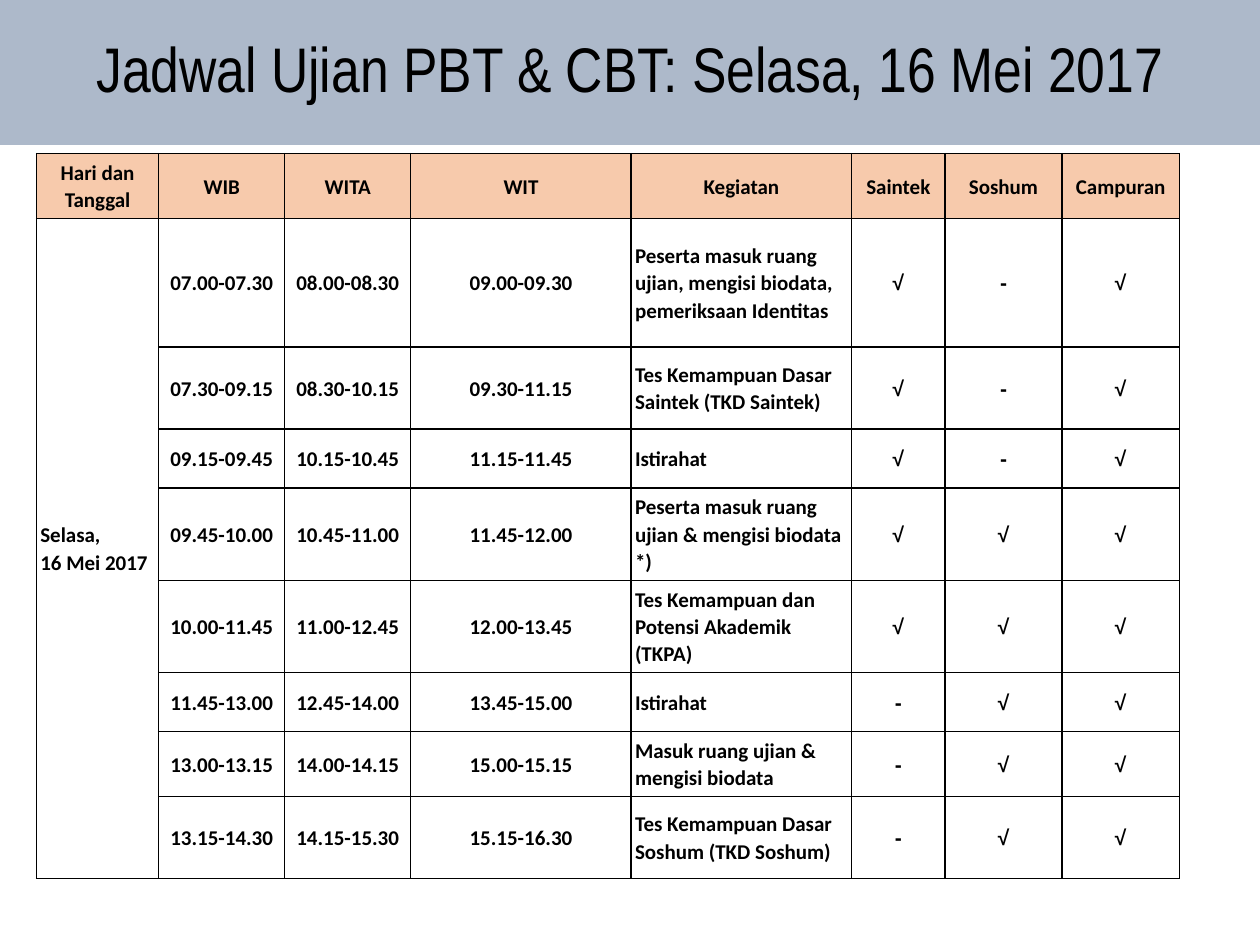
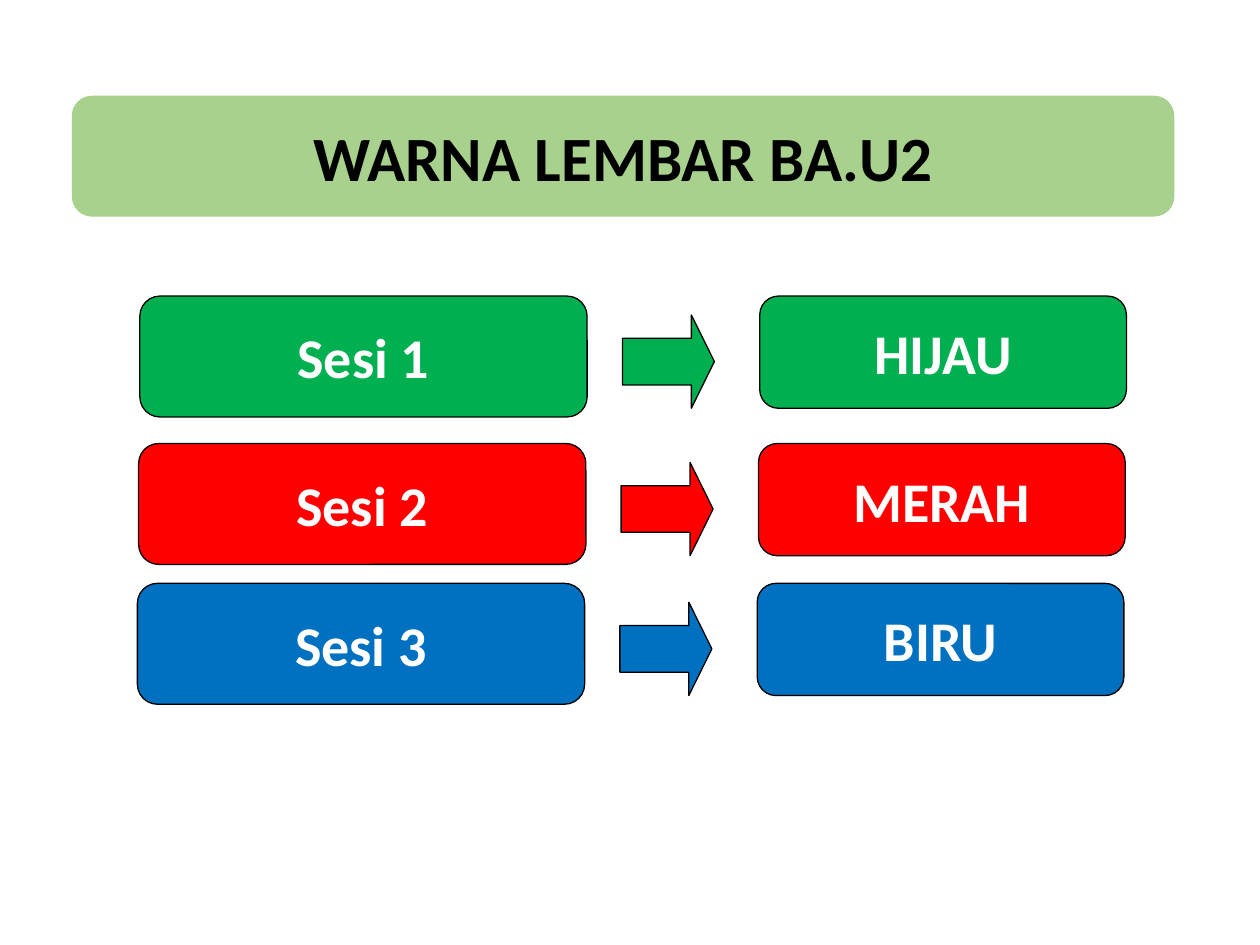
from dataclasses import dataclass

from lxml.etree import SubElement
from pptx import Presentation
from pptx.dml.color import RGBColor
from pptx.enum.shapes import MSO_SHAPE
from pptx.enum.text import MSO_ANCHOR, PP_ALIGN
from pptx.oxml.ns import qn
from pptx.util import Pt

SCALE = 9144


def px(n):
    return n * SCALE


@dataclass(frozen=True)
class Theme:
    band: str = "ADB9CA"
    head: str = "F7CAAC"
    banner: str = "A9D18E"
    green: str = "00B050"
    red: str = "FF0000"
    blue: str = "0070C0"
    ink: str = "000000"
    paper: str = "FFFFFF"
    body: str = "Calibri"
    narrow: str = "Arial Narrow"
    mark: str = "Arial"
    title: int = 36
    label: int = 32
    small: int = 12


class Deck:
    def __init__(self, theme):
        self.theme = theme
        self.prs = Presentation()
        self.prs.slide_width, self.prs.slide_height = px(1000), px(750)
        self.slide = None

    def page(self):
        self.slide = self.prs.slides.add_slide(self.prs.slide_layouts[6])

    def words(self, frame, text, size, color, font, bold=True, align=PP_ALIGN.CENTER, space=1.0):
        frame.text = text
        for par in frame.paragraphs:
            par.alignment = align
            par.line_spacing = space
            par.font.size = Pt(size)
            par.font.name = font
            par.font.bold = bold
            par.font.color.rgb = RGBColor.from_string(color)

    def shape(self, kind, box, fill, line=None):
        item = self.slide.shapes.add_shape(kind, *map(px, box))
        item.shadow.inherit = False
        item.fill.solid()
        item.fill.fore_color.rgb = RGBColor.from_string(fill)
        if line:
            item.line.color.rgb = RGBColor.from_string(line)
            item.line.width = Pt(0.75)
        else:
            item.line.fill.background()
        return item

    def title(self, kind, box, fill, text, font, bold, space=1.0):
        frame = self.shape(kind, box, fill).text_frame
        frame.word_wrap = True
        frame.vertical_anchor = MSO_ANCHOR.MIDDLE
        self.words(frame, text, self.theme.title, self.theme.ink, font, bold, space=space)

    def label(self, box, fill, text):
        frame = self.shape(MSO_SHAPE.ROUNDED_RECTANGLE, box, fill, self.theme.ink).text_frame
        frame.word_wrap = False
        frame.vertical_anchor = MSO_ANCHOR.MIDDLE
        self.words(frame, text, self.theme.label, self.theme.paper, self.theme.body)

    def arrow(self, box, fill):
        item = self.shape(MSO_SHAPE.RIGHT_ARROW, box, fill, self.theme.ink)
        item.adjustments[0], item.adjustments[1] = 0.5, 0.25

    def border(self, cell):
        props = cell._tc.get_or_add_tcPr()
        for side in ("lnL", "lnR", "lnT", "lnB"):
            line = SubElement(props, qn(f"a:{side}"), w=str(Pt(1)))
            fill = SubElement(line, qn("a:solidFill"))
            SubElement(fill, qn("a:srgbClr"), val=self.theme.ink)

    def cell(self, cell, text, font, align, fill=None):
        cell.margin_left = cell.margin_right = px(3)
        cell.margin_top = cell.margin_bottom = px(4)
        cell.vertical_anchor = MSO_ANCHOR.MIDDLE
        self.border(cell)
        if fill:
            cell.fill.solid()
            cell.fill.fore_color.rgb = RGBColor.from_string(fill)
        else:
            cell.fill.background()
        self.words(cell.text_frame, text, self.theme.small, self.theme.ink, font,
                   align=align, space=1.07)

    def table(self, left, top, cols, rows, data, lefts, marks):
        frame = self.slide.shapes.add_table(
            len(rows), len(cols), px(left), px(top), px(sum(cols)), px(sum(rows)))
        grid = frame.table
        grid.first_row = grid.horz_banding = False
        for col, width in zip(grid.columns, cols):
            col.width = px(width)
        for row, height in zip(grid.rows, rows):
            row.height = px(height)
        for r, line in enumerate(data):
            for c, text in enumerate(line):
                font = self.theme.mark if r and c in marks else self.theme.body
                align = PP_ALIGN.LEFT if r and c in lefts else PP_ALIGN.CENTER
                self.cell(grid.cell(r, c), text, font, align, None if r else self.theme.head)
        return grid


HEAD = ["Hari dan\nTanggal", "WIB", "WITA", "WIT", "Kegiatan", "Saintek", "Soshum", "Campuran"]
PLAN = [
    ("07.00-07.30", "08.00-08.30", "09.00-09.30",
     "Peserta masuk ruang ujian, mengisi biodata, pemeriksaan Identitas", "√-√"),
    ("07.30-09.15", "08.30-10.15", "09.30-11.15",
     "Tes Kemampuan Dasar Saintek (TKD Saintek)", "√-√"),
    ("09.15-09.45", "10.15-10.45", "11.15-11.45", "Istirahat", "√-√"),
    ("09.45-10.00", "10.45-11.00", "11.45-12.00",
     "Peserta masuk ruang ujian & mengisi biodata *)", "√√√"),
    ("10.00-11.45", "11.00-12.45", "12.00-13.45",
     "Tes Kemampuan dan Potensi Akademik (TKPA)", "√√√"),
    ("11.45-13.00", "12.45-14.00", "13.45-15.00", "Istirahat", "-√√"),
    ("13.00-13.15", "14.00-14.15", "15.00-15.15",
     "Masuk ruang ujian & mengisi biodata", "-√√"),
    ("13.15-14.30", "14.15-15.30", "15.15-16.30",
     "Tes Kemampuan Dasar Soshum (TKD Soshum)", "-√√"),
]


def exam(deck):
    deck.page()
    deck.title(MSO_SHAPE.RECTANGLE, (0, 0, 1000, 115), deck.theme.band,
               "Jadwal Ujian PBT & CBT: Selasa, 16 Mei 2017", deck.theme.narrow, False, 0.9)
    data = [HEAD]
    for i, (*times, task, marks) in enumerate(PLAN):
        data.append(["" if i else "Selasa,\n16 Mei 2017", *times, task, *marks])
    grid = deck.table(29, 122, [97, 100, 100, 175, 175, 74, 93, 93],
                      [47, 102, 65, 47, 65, 65, 47, 47, 65], data,
                      lefts=(0, 4), marks=(5, 6, 7))
    grid.cell(1, 0).merge(grid.cell(len(PLAN), 0))


def sheet(deck):
    theme = deck.theme
    deck.page()
    deck.title(MSO_SHAPE.ROUNDED_RECTANGLE, (57, 76, 875, 96), theme.banner,
               "WARNA LEMBAR BA.U2", theme.body, True)
    rows = [(235, theme.green, "HIJAU"), (352, theme.red, "MERAH"), (463, theme.blue, "BIRU")]
    for i, (top, color, name) in enumerate(rows):
        left = 111 - i
        deck.label((left, top, 355, 96), color, f"Sesi {i + 1}")
        deck.arrow((left + 383, top + 15, 73, 74), color)
        deck.label((left + 492, top, 291, 89), color, name)


def main():
    deck = Deck(Theme())
    exam(deck)
    sheet(deck)
    deck.prs.save("out.pptx")


if __name__ == "__main__":
    main()
